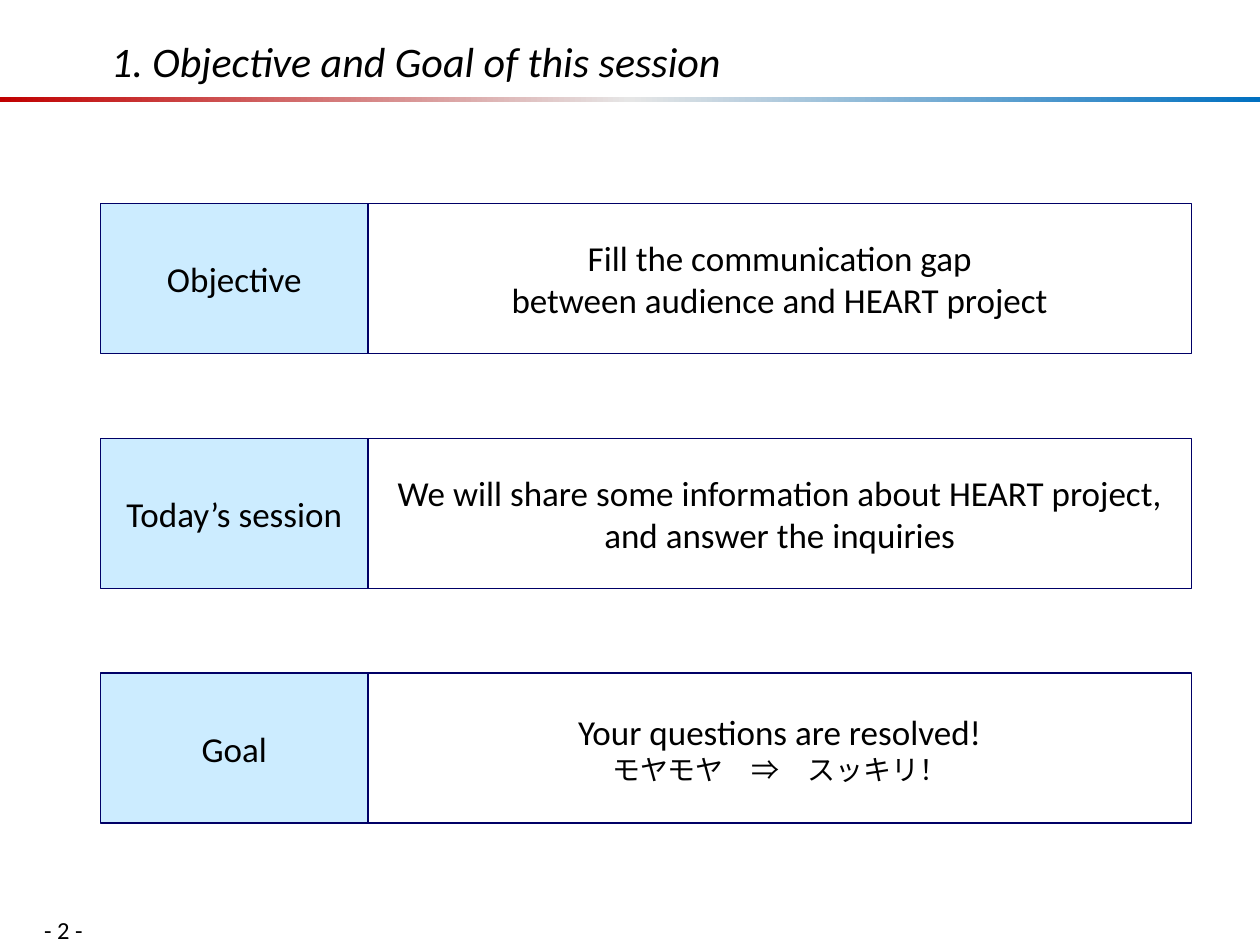
from copy import deepcopy

from pptx import Presentation
from pptx.dml.color import RGBColor
from pptx.enum.shapes import MSO_SHAPE as Shape
from pptx.enum.text import MSO_ANCHOR as Anchor, PP_ALIGN as Align
from pptx.oxml.ns import qn
from pptx.util import Cm, Pt

BLACK = RGBColor(0x00, 0x00, 0x00)
WHITE = RGBColor(0xFF, 0xFF, 0xFF)
NAVY = RGBColor(0x00, 0x00, 0x66)
PALE_BLUE = RGBColor(0xCC, 0xEC, 0xFF)
RED = RGBColor(0xC0, 0x00, 0x00)
GREY = RGBColor(0xE6, 0xE6, 0xE6)
BLUE = RGBColor(0x00, 0x70, 0xC0)


def write(shape, *lines, align=Align.LEFT, anchor=Anchor.TOP, italic=False):
    """Fill a shape with one paragraph per (text, point size) pair."""
    frame = shape.text_frame
    frame.word_wrap = True
    frame.vertical_anchor = anchor
    frame.margin_left = frame.margin_right = 0
    frame.margin_top = frame.margin_bottom = 0
    for index, (text, size) in enumerate(lines):
        paragraph = frame.add_paragraph() if index else frame.paragraphs[0]
        paragraph.text = text
        paragraph.alignment = align
        font = paragraph.font
        font.name = "Calibri"
        font.size = Pt(size)
        font.italic = italic
        font.color.rgb = BLACK


def add_rectangle(left, top, width, height):
    rectangle = slide.shapes.add_shape(
        Shape.RECTANGLE, Cm(left), Cm(top), Cm(width), Cm(height))
    rectangle.shadow.inherit = False
    return rectangle


deck = Presentation()
deck.slide_width = Cm(25.4)
deck.slide_height = Cm(19.05)
slide = deck.slides.add_slide(deck.slide_layouts[6])

# Header and page number
page_number = slide.shapes.add_textbox(Cm(0.89), Cm(18.44), Cm(3.6), Cm(0.76))
write(page_number, ("- 2 -", 14))

header_rule = add_rectangle(0, 1.95, 25.4, 0.1)
header_rule.line.fill.background()
header_rule.fill.gradient()
header_rule.fill.gradient_angle = 0
stop_list = header_rule._element.spPr.find(qn("a:gradFill")).find(qn("a:gsLst"))
stop_list.insert(1, deepcopy(stop_list[0]))
for stop, position, color in zip(
        header_rule.fill.gradient_stops, (0, 0.5, 1), (RED, GREY, BLUE)):
    stop.position = position
    stop.color.rgb = color

title = slide.shapes.add_textbox(Cm(2.24), Cm(0.13), Cm(20.17), Cm(1.6))
write(title, ("1. Objective and Goal of this session", 24),
      anchor=Anchor.BOTTOM, italic=True)

# Rows of label and statement
LABEL_LEFT, LABEL_WIDTH, STATEMENT_WIDTH = 2.03, 5.39, 16.6
FIRST_TOP, ROW_HEIGHT, ROW_PITCH = 4.11, 3.02, 4.73

rows = [
    ("Objective",
     [("Fill the communication gap\nbetween audience and HEART project", 20)]),
    ("Today’s session",
     [("We will share some information about HEART project, "
       "and answer the inquiries", 20)]),
    ("Goal",
     [("Your questions are resolved!", 20), ("モヤモヤ　⇒　スッキリ！", 16)]),
]

for row, (label, statement) in enumerate(rows):
    top = FIRST_TOP + row * ROW_PITCH
    cells = [
        (LABEL_LEFT + LABEL_WIDTH, STATEMENT_WIDTH, WHITE, statement),
        (LABEL_LEFT, LABEL_WIDTH, PALE_BLUE, [(label, 20)]),
    ]
    for left, width, color, lines in cells:
        cell = add_rectangle(left, top, width, ROW_HEIGHT)
        cell.fill.solid()
        cell.fill.fore_color.rgb = color
        cell.line.color.rgb = NAVY
        cell.line.width = Pt(0.75)
        write(cell, *lines, align=Align.CENTER, anchor=Anchor.MIDDLE)

deck.save("out.pptx")
